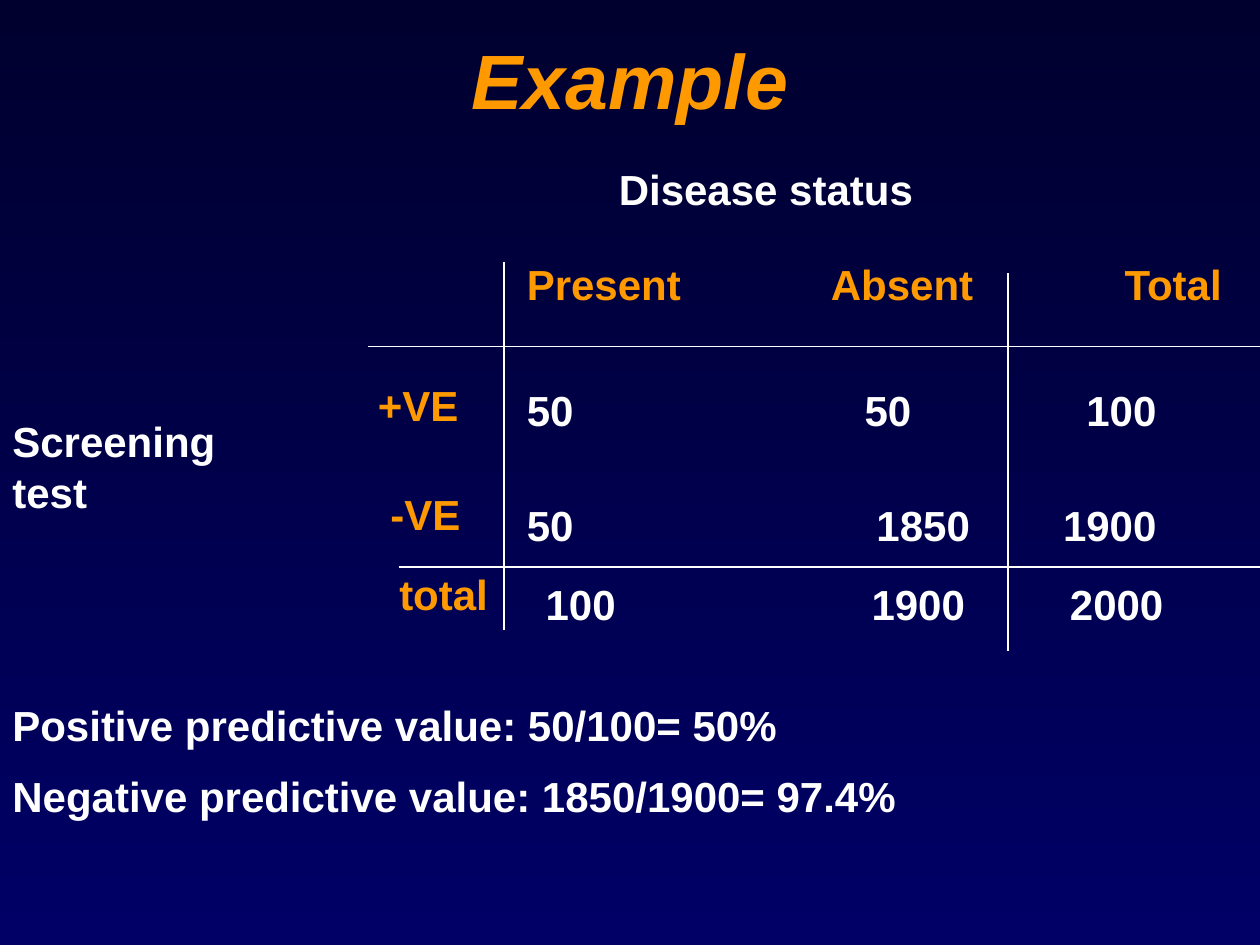
"""Build a slide with a two-by-two screening table and its predictive values."""
from pptx import Presentation
from pptx.dml.color import RGBColor
from pptx.enum.shapes import MSO_CONNECTOR
from pptx.enum.text import MSO_ANCHOR, PP_ALIGN
from pptx.oxml.ns import qn
from pptx.util import Cm, Pt
from lxml import etree

STRAIGHT = MSO_CONNECTOR.STRAIGHT
MIDDLE = MSO_ANCHOR.MIDDLE
LEFT, CENTER = PP_ALIGN.LEFT, PP_ALIGN.CENTER
ORANGE = RGBColor(0xFF, 0x99, 0x00)
WHITE = RGBColor(0xFF, 0xFF, 0xFF)
NIGHT = RGBColor(0x00, 0x00, 0x2F)
NAVY = RGBColor(0x00, 0x00, 0x66)

BODY_FONT = {"name": "Arial", "size": Pt(24), "bold": True}
TITLE_FONT = {"name": "Arial", "size": Pt(44), "bold": True, "italic": True}
INSET = 0.25
ROW_HEIGHT = 1.27
SLIDE_WIDTH, SLIDE_HEIGHT = 25.4, 19.05

TITLE = "Example"
LABELS = [
    ("Disease status", (11.63, 3.18, 7.62, ROW_HEIGHT), WHITE, CENTER),
    ("Screening test", (0, 8.26, 4.88, 2.29), WHITE, LEFT),
    ("+VE", (7.37, 7.52, 2.13, ROW_HEIGHT), ORANGE, LEFT),
    ("-VE", (7.62, 9.73, 1.93, ROW_HEIGHT), ORANGE, LEFT),
    ("total", (7.8, 11.33, 2.29, ROW_HEIGHT), ORANGE, LEFT),
]
ROWS = [
    (("Present", "Absent", "Total"), 5.08, (10.62, 16.75, 22.67), ORANGE),
    (("50", "50", "100"), 7.62, (10.62, 17.43, 21.9), WHITE),
    (("50", "1850", "1900"), 9.95, (10.62, 17.67, 21.43), WHITE),
    (("100", "1900", "2000"), 11.53, (11.0, 17.57, 21.57), WHITE),
]
RULES = [
    (20.32, 5.5, 20.32, 13.12),
    (10.16, 5.29, 10.16, 12.7),
    (7.41, 6.99, SLIDE_WIDTH, 6.99),
    (8.04, 11.43, SLIDE_WIDTH, 11.43),
]
PREDICTIVE_VALUES = [
    "Positive predictive value: 50/100= 50%",
    "Negative predictive value: 1850/1900= 97.4%",
]


def format_run(run, font_values, color):
    for attribute, value in font_values.items():
        setattr(run.font, attribute, value)
    run.font.color.rgb = color


def add_text(slide, lines, place, color, align=LEFT, tabs=()):
    frame = slide.shapes.add_textbox(*map(Cm, place)).text_frame
    frame.word_wrap = True
    for index, line in enumerate(lines):
        paragraph = frame.add_paragraph() if index else frame.paragraphs[0]
        paragraph.alignment = align
        if index:
            paragraph.space_before = Pt(12)
        if tabs:
            properties = paragraph._p.get_or_add_pPr()
            tab_list = etree.SubElement(properties, qn("a:tabLst"))
            for tab in tabs:
                etree.SubElement(tab_list, qn("a:tab"), pos=str(Cm(tab)), algn="l")
        run = paragraph.add_run()
        run.text = line
        format_run(run, BODY_FONT, color)


def add_row(slide, values, top, starts, color):
    place = (starts[0] - INSET, top, SLIDE_WIDTH - starts[0] + INSET, ROW_HEIGHT)
    tabs = [start - starts[0] for start in starts[1:]]
    add_text(slide, ["\t".join(values)], place, color, tabs=tabs)


def add_rule(slide, ends):
    rule = slide.shapes.add_connector(STRAIGHT, *map(Cm, ends))
    rule.line.color.rgb = WHITE
    rule.line.width = Pt(0.75)
    etree.SubElement(rule._element.spPr, qn("a:effectLst"))


def add_title(slide):
    title = slide.shapes.title
    title.left, title.top, title.width, title.height = map(Cm, (1.27, 0, 22.86, 3.18))
    title.text_frame.vertical_anchor = MIDDLE
    paragraph = title.text_frame.paragraphs[0]
    paragraph.alignment = CENTER
    run = paragraph.add_run()
    run.text = TITLE
    format_run(run, TITLE_FONT, ORANGE)


def main():
    presentation = Presentation()
    presentation.slide_width = Cm(SLIDE_WIDTH)
    presentation.slide_height = Cm(SLIDE_HEIGHT)
    slide = presentation.slides.add_slide(presentation.slide_layouts.get_by_name("Title Only"))
    background = slide.background.fill
    background.gradient()
    background.gradient_angle = 270
    for stop, color in zip(background.gradient_stops, (NIGHT, NAVY)):
        stop.color.rgb = color

    add_title(slide)
    for label, place, color, align in LABELS:
        add_text(slide, [label], place, color, align)
    for row in ROWS:
        add_row(slide, *row)
    for ends in RULES:
        add_rule(slide, ends)
    add_text(slide, PREDICTIVE_VALUES, (0, 13.97, 22.43, 2.79), WHITE)
    presentation.save("out.pptx")


if __name__ == "__main__":
    main()
